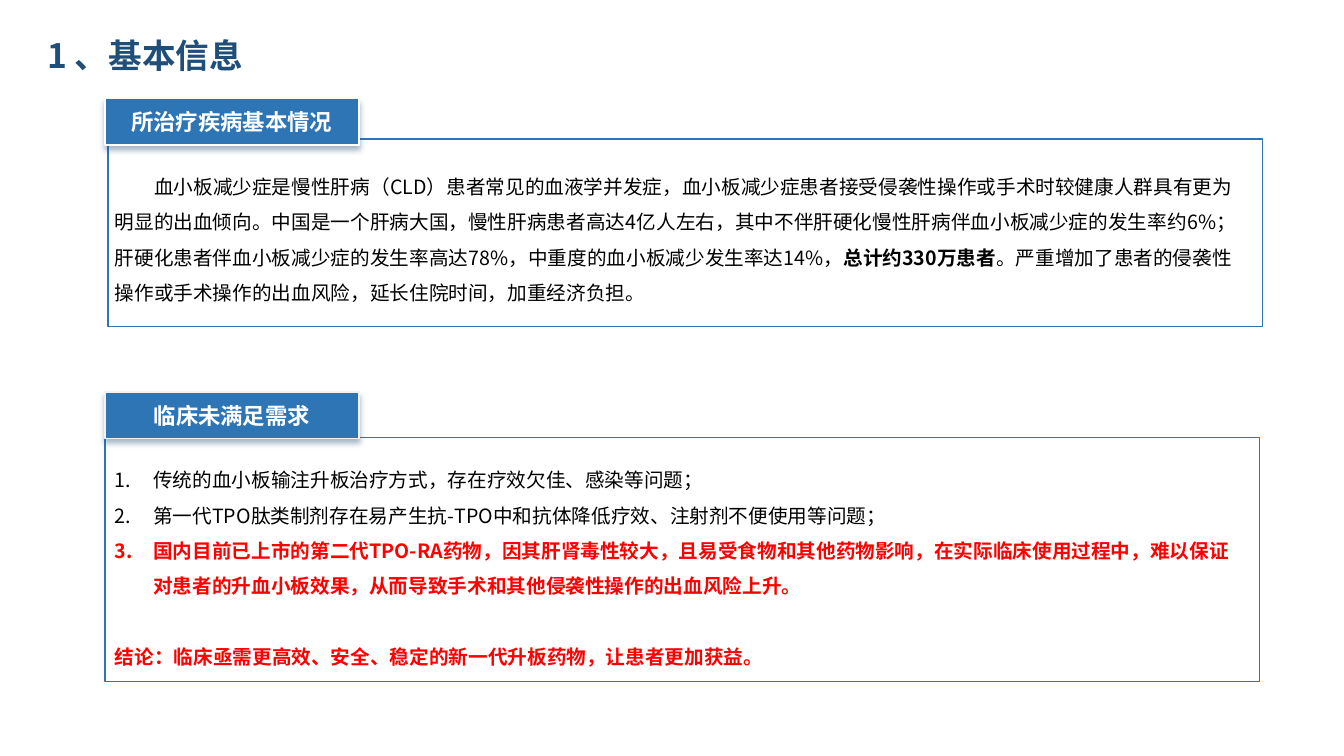
from lxml.etree import SubElement
from pptx import Presentation
from pptx.dml.color import RGBColor
from pptx.enum.lang import MSO_LANGUAGE_ID
from pptx.enum.shapes import MSO_SHAPE
from pptx.enum.text import MSO_ANCHOR, MSO_AUTO_SIZE, PP_ALIGN
from pptx.oxml.ns import qn
from pptx.util import Inches, Pt

COLORS = {"navy": "1F4E79", "blue": "2E75B6", "white": "FFFFFF", "pale": "F2F2F2",
          "black": "000000", "red": "FF0000"}
FONT = "Noto Sans CJK SC"
LEFT, WIDTH = 1.04, 11.45

DISEASE = [
    ("血小板减少症是慢性肝病（CLD）患者常见的血液学并发症，血小板减少症患者接受侵袭性操作或手术时较健康人群具有更为明显的出血倾向。"
     "中国是一个肝病大国，慢性肝病患者高达4亿人左右，其中不伴肝硬化慢性肝病伴血小板减少症的发生率约6%；"
     "肝硬化患者伴血小板减少症的发生率高达78%，中重度的血小板减少发生率达14%，", False),
    ("总计约330万患者", True),
    ("。严重增加了患者的侵袭性操作或手术操作的出血风险，延长住院时间，加重经济负担。", False),
]
NEEDS = [
    ("传统的血小板输注升板治疗方式，存在疗效欠佳、感染等问题；", "black", False),
    ("第一代TPO肽类制剂存在易产生抗-TPO中和抗体降低疗效、注射剂不便使用等问题；", "black", False),
    ("国内目前已上市的第二代TPO-RA药物，因其肝肾毒性较大，且易受食物和其他药物影响，在实际临床使用过程中，"
     "难以保证对患者的升血小板效果，从而导致手术和其他侵袭性操作的出血风险上升。", "red", True),
]
CONCLUSION = "结论：临床亟需更高效、安全、稳定的新一代升板药物，让患者更加获益。"


class Deck:
    def __init__(self):
        self.prs = Presentation()
        self.prs.slide_width, self.prs.slide_height = Inches(13.33), Inches(7.5)
        self.s = self.prs.slides.add_slide(self.prs.slide_layouts[1])

    def place(self, sp, *box):
        for name, value in zip(("left", "top", "width", "height"), box):
            setattr(sp, name, Inches(value))

    def frame(self, sp, anchor):
        tf = sp.text_frame
        fmt = {"word_wrap": True, "auto_size": MSO_AUTO_SIZE.NONE, "vertical_anchor": anchor}
        for name, value in fmt.items():
            setattr(tf, name, value)
        return tf

    def run(self, p, text, size, color, bold=False):
        r = p.add_run()
        r.text = text
        fmt = {"size": Pt(size), "bold": bold, "name": FONT,
               "language_id": MSO_LANGUAGE_ID.SIMPLIFIED_CHINESE}
        for name, value in fmt.items():
            setattr(r.font, name, value)
        r.font.color.rgb = RGBColor.from_string(COLORS[color])
        SubElement(r.font._element, qn("a:ea"), typeface=FONT)

    def paragraph(self, tf, before=0, margin=0, indent=0, bullet="a:buNone", **bullet_format):
        p = tf.paragraphs[0] if not tf.paragraphs[0].runs else tf.add_paragraph()
        fmt = {"line_spacing": 1.5, "space_before": Pt(before), "alignment": PP_ALIGN.LEFT}
        for name, value in fmt.items():
            setattr(p, name, value)
        pPr = p._p.get_or_add_pPr()
        pPr.set("marL", str(Inches(margin)))
        pPr.set("indent", str(Inches(indent)))
        SubElement(pPr, qn(bullet), **bullet_format)
        return p

    def rect(self, x, y, w, h, line, fill=None):
        sp = self.s.shapes.add_shape(MSO_SHAPE.RECTANGLE, *map(Inches, (x, y, w, h)))
        sp.shadow.inherit = False
        sp.line.color.rgb = RGBColor.from_string(COLORS[line])
        sp.line.width = Pt(1)
        if fill:
            sp.fill.solid()
            sp.fill.fore_color.rgb = RGBColor.from_string(COLORS[fill])
        else:
            sp.fill.background()
        return sp

    def tab(self, y, text, line):
        sp = self.rect(LEFT, y, 2.52, 0.46, line, "blue")
        effects = sp._element.spPr.find(qn("a:effectLst"))
        shadow = SubElement(effects, qn("a:outerShdw"), blurRad=str(Pt(4)), dist=str(Pt(3)),
                            dir="5400000", algn="t", rotWithShape="0")
        color = SubElement(shadow, qn("a:srgbClr"), val=COLORS["navy"])
        SubElement(color, qn("a:alpha"), val="40000")
        p = self.frame(sp, MSO_ANCHOR.MIDDLE).paragraphs[0]
        p.alignment = PP_ALIGN.CENTER
        self.run(p, text, 16, "white", True)

    def title(self, text):
        sp = self.s.shapes.title
        self.place(sp, 0.37, -0.01, 4.03, 1.11)
        p = self.frame(sp, MSO_ANCHOR.MIDDLE).paragraphs[0]
        p.alignment = PP_ALIGN.LEFT
        self.run(p, text, 24, "navy", True)

    def body(self, y, h, runs):
        sp = self.s.shapes.add_textbox(*map(Inches, (LEFT, y, WIDTH, h)))
        p = self.paragraph(self.frame(sp, MSO_ANCHOR.TOP), indent=0.39)
        for text, bold in runs:
            self.run(p, text, 14, "black", bold)

    def numbered(self, y, h, items, conclusion):
        sp = self.s.placeholders[1]
        self.place(sp, LEFT, y, WIDTH, h)
        tf = self.frame(sp, MSO_ANCHOR.TOP)
        for text, color, bold in items:
            p = self.paragraph(tf, 0, 0.38, -0.38, "a:buAutoNum", type="arabicPeriod")
            self.run(p, text, 14, color, bold)
        self.run(self.paragraph(tf, before=25), conclusion, 14, "red", True)


def main():
    deck = Deck()
    deck.title("1 、基本信息")
    deck.rect(LEFT, 4.34, WIDTH, 2.42, "blue")
    deck.rect(1.07, 1.38, WIDTH, 1.86, "blue")
    deck.body(1.57, 1.48, DISEASE)
    deck.tab(0.98, "所治疗疾病基本情况", "white")
    deck.numbered(4.48, 2.18, NEEDS, CONCLUSION)
    deck.tab(3.89, "临床未满足需求", "pale")
    deck.prs.save("out.pptx")


if __name__ == "__main__":
    main()
